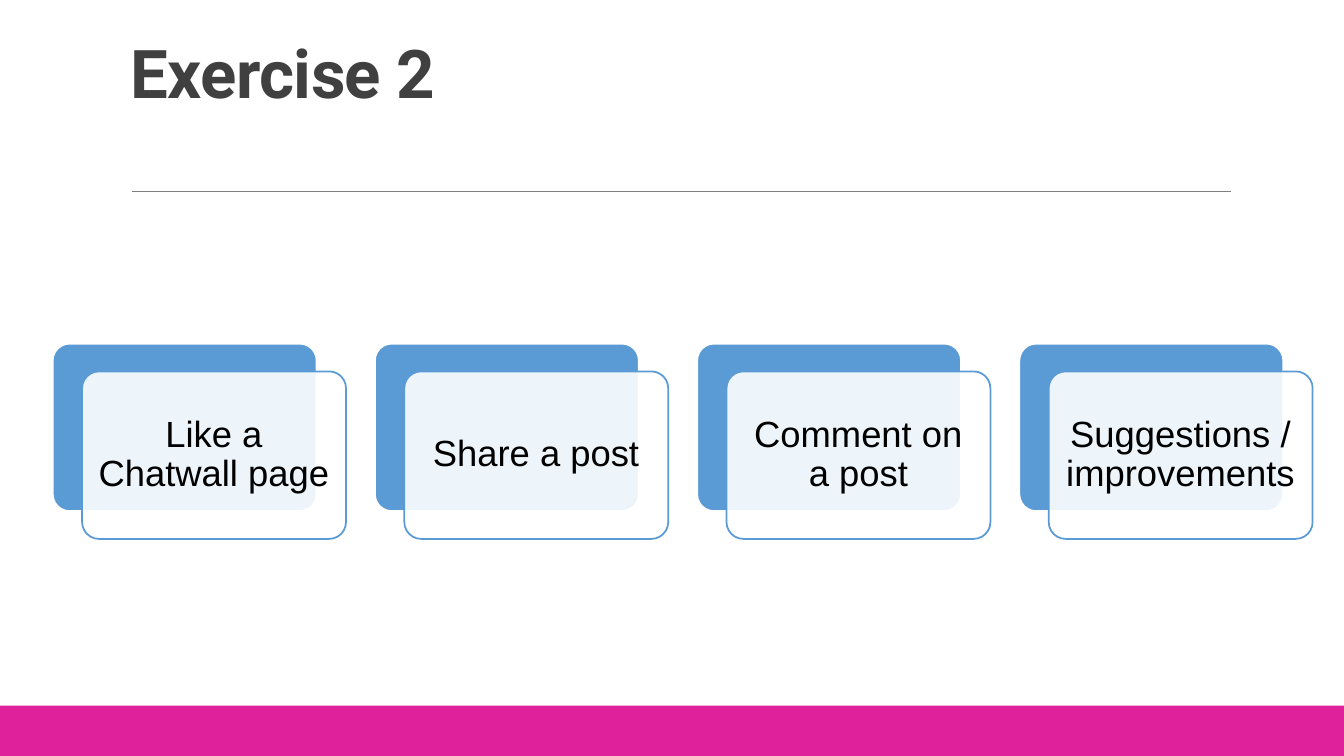
"""Build the Exercise 2 slide with its row of four task cards."""
from dataclasses import dataclass

from lxml.etree import SubElement as Sub
from pptx import Presentation
from pptx.dml.color import RGBColor as RGB
from pptx.enum.shapes import MSO_CONNECTOR as Conn, MSO_SHAPE as Kind
from pptx.enum.text import MSO_ANCHOR as Anchor, PP_ALIGN as Align
from pptx.oxml.ns import qn
from pptx.shapes.autoshape import Shape
from pptx.slide import Slide
from pptx.util import Cm, Pt

HUES = {"pink": "DF219B", "rule": "808080", "title": "404040",
        "blue": "5B9BD5", "white": "FFFFFF", "text": "000000"}
PITCH = 8.12


@dataclass
class Box:
    left: float
    top: float
    width: float
    height: float

    def cm(self) -> list[Cm]:
        return [Cm(v) for v in (self.left, self.top, self.width, self.height)]


@dataclass
class Card:
    label: str
    slot: int


CARDS = [Card(label, slot) for slot, label in enumerate((
    "Like a Chatwall page", "Share a post", "Comment on a post",
    "Suggestions / improvements"))]


def hue(name: str) -> RGB:
    return RGB.from_string(HUES[name])


def block(slide: Slide, kind: Kind, box: Box, fill: str, edge: str = "") -> Shape:
    shape = slide.shapes.add_shape(kind, *box.cm())
    shape.shadow.inherit = False
    shape.fill.solid()
    shape.fill.fore_color.rgb = hue(fill)
    if edge:
        shape.line.color.rgb = hue(edge)
        shape.line.width = Pt(1.25)
        shape.adjustments[0] = 0.1
    else:
        shape.line.fill.background()
    return shape


def draw_card(slide: Slide, card: Card) -> None:
    left = 1.33 + card.slot * PITCH
    block(slide, Kind.ROUNDED_RECTANGLE, Box(left, 8.66, 6.65, 4.22), "blue", "white")
    front = block(slide, Kind.ROUNDED_RECTANGLE, Box(left + 0.74, 9.36, 6.65, 4.22),
                  "white", "blue")
    tint = front.fill._xPr.find(qn("a:solidFill"))[0]
    Sub(tint, qn("a:alpha"), val="90000")
    frame = front.text_frame
    frame.word_wrap = True
    frame.vertical_anchor = Anchor.MIDDLE
    frame.margin_left = frame.margin_right = Cm(0.28)
    frame.margin_top = frame.margin_bottom = Cm(0.28)
    para = frame.paragraphs[0]
    para.alignment = Align.CENTER
    para.line_spacing = 0.9
    run = para.add_run()
    run.text = card.label
    run.font.name, run.font.size = "Arial", Pt(26)
    run.font.color.rgb = hue("text")


def draw_title(slide: Slide, text: str) -> None:
    frame = slide.shapes.add_textbox(*Box(3.05, 0.97, 27.94, 3.86).cm()).text_frame
    frame.word_wrap = True
    para = frame.paragraphs[0]
    para.line_spacing = 0.85
    run = para.add_run()
    run.text = text
    run.font.name, run.font.size, run.font.bold = "Roboto", Pt(48), True
    run.font.color.rgb = hue("title")
    run.font._element.set("spc", "-50")


def draw_rule(slide: Slide) -> None:
    rule = slide.shapes.add_connector(
        Conn.STRAIGHT, Cm(3.33), Cm(4.82), Cm(31.01), Cm(4.82))
    rule.line.color.rgb = hue("rule")
    rule.line.width = Pt(0.5)
    Sub(rule._element.spPr, qn("a:effectLst"))


def main() -> None:
    deck = Presentation()
    deck.slide_width, deck.slide_height = Cm(33.87), Cm(19.05)
    slide = deck.slides.add_slide(deck.slide_layouts[6])
    block(slide, Kind.RECTANGLE, Box(0, 17.78, 33.87, 1.27), "pink")
    draw_rule(slide)
    draw_title(slide, "Exercise 2")
    for card in CARDS:
        draw_card(slide, card)
    deck.save("out.pptx")


if __name__ == "__main__":
    main()
